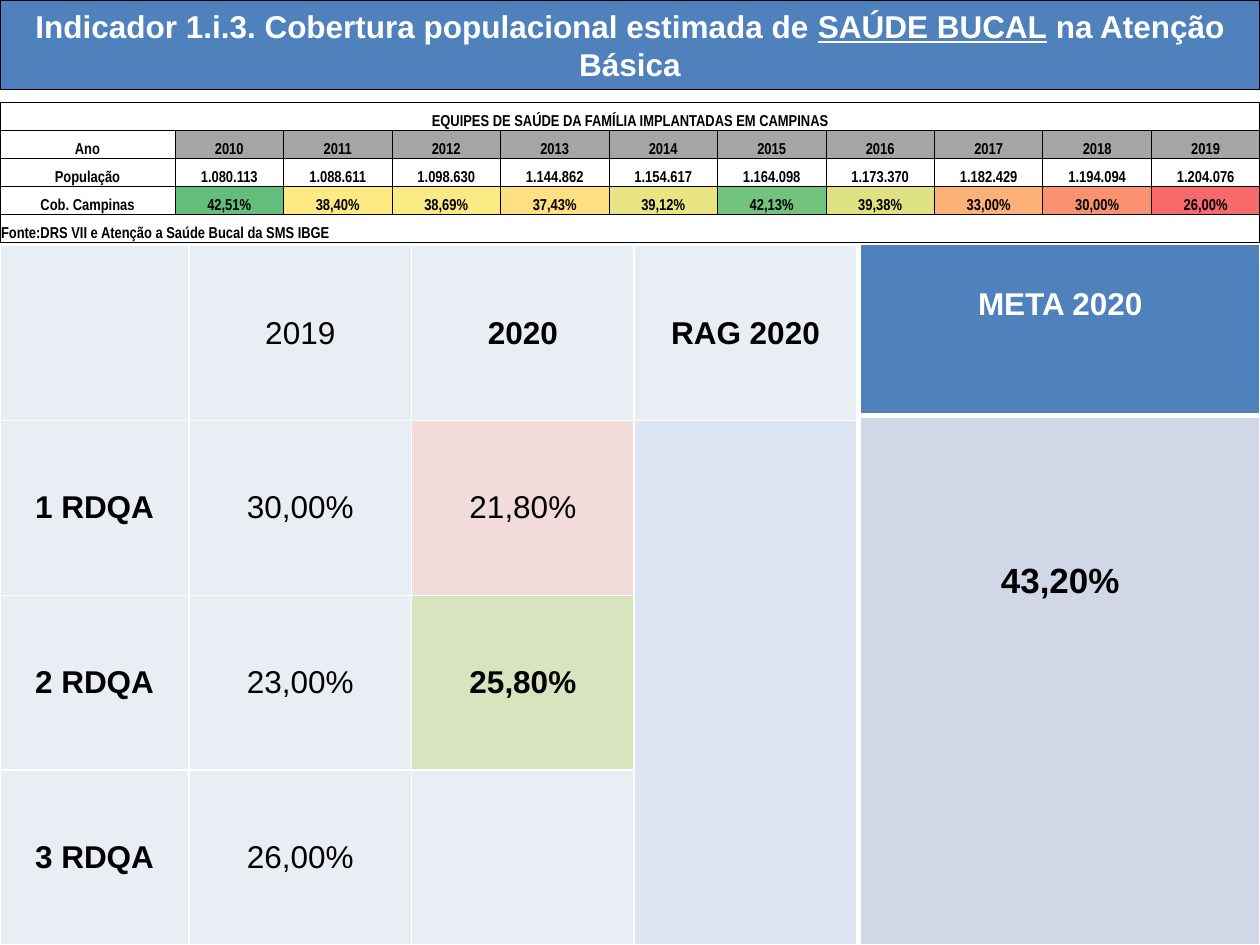
from lxml import etree
from pptx import Presentation
from pptx.dml.color import RGBColor
from pptx.enum import text
from pptx.oxml import ns
from pptx.util import Pt

HUE = {
    "blue": "4F81BD", "white": "FFFFFF", "black": "000000", "gray": "A5A5A5",
    "pale": "E9EDF4", "pink": "F2DCDB", "lime": "D7E4BD", "sky": "DCE6F2",
    "mist": "D0D8E8",
}
MID, LOW, TOP = (text.MSO_ANCHOR.MIDDLE, text.MSO_ANCHOR.BOTTOM,
                 text.MSO_ANCHOR.TOP)
MIDST, LEFT = text.PP_ALIGN.CENTER, text.PP_ALIGN.LEFT


def tone(name):
    return RGBColor.from_string(HUE.get(name, name))


class Deck:
    """Holds the font and the slide being drawn."""

    def __init__(self, wide, high, font):
        self.show = Presentation()
        self.show.slide_width, self.show.slide_height = Pt(wide), Pt(high)
        self.slide = self.show.slides.add_slide(self.show.slide_layouts[5])
        self.font = font

    def add_text(self, para, words, size, hue="black", bold=True, line=False,
                 font=None):
        run = para.add_run()
        run.text = words
        face = run.font
        face.name, face.size = font or self.font, Pt(size)
        face.bold, face.underline = bold, line
        face.color.rgb = tone(hue)

    def title(self, box, parts):
        """parts: (words, underlined) pairs"""
        head = self.slide.shapes.title
        head.left, head.top, head.width, head.height = map(Pt, box)
        head.fill.solid()
        head.fill.fore_color.rgb = tone("blue")
        head.line.color.rgb = tone("black")
        head.line.width = Pt(0.75)
        frame = head.text_frame
        frame.auto_size = text.MSO_AUTO_SIZE.NONE
        frame.word_wrap = True
        frame.vertical_anchor = MID
        para = frame.paragraphs[0]
        para.alignment = MIDST
        for words, line in parts:
            self.add_text(para, words, 18, "white", line=line)

    def table(self, x, y, cols, rows, hue, width):
        grid = self.slide.shapes.add_table(
            len(rows), len(cols), Pt(x), Pt(y), Pt(sum(cols)), Pt(sum(rows))
        ).table
        grid.first_row = grid.horz_banding = False
        for col, size in zip(grid.columns, cols):
            col.width = Pt(size)
        for row, size in zip(grid.rows, rows):
            row.height = Pt(size)
        for cell in grid.iter_cells():
            for side in "LRTB":
                self.edge(cell, side, hue, width)
            cell.fill.background()
        return grid

    def edge(self, cell, side, hue, width):
        props = cell._tc.get_or_add_tcPr()
        tag = ns.qn(f"a:ln{side}")
        line = props.find(tag)
        if line is None:
            line = etree.SubElement(props, tag)
            fill = etree.SubElement(line, ns.qn("a:solidFill"))
            etree.SubElement(fill, ns.qn("a:srgbClr"), val=HUE[hue])
        line.set("w", str(Pt(width)))

    def cell(self, cell, words, size, fill=None, bold=True, font=None,
             hue="black", side=MIDST, stand=MID, pads=(0, 0, 0, 0)):
        (cell.margin_left, cell.margin_top,
         cell.margin_right, cell.margin_bottom) = map(Pt, pads)
        cell.vertical_anchor = stand
        if fill:
            cell.fill.solid()
            cell.fill.fore_color.rgb = tone(fill)
        if words:
            para = cell.text_frame.paragraphs[0]
            para.alignment = side
            self.add_text(para, words, size, hue, bold, font=font)


def main():
    deck = Deck(720, 540, "Arial")

    # Title
    deck.title((0, 0, 720, 51), [
        ("Indicador 1.i.3. Cobertura populacional estimada de ", False),
        ("SAÚDE BUCAL", True),
        (" na Atenção Básica", False),
    ])

    # Results by four-month report
    goals = [
        [("", "pale", 0), ("2019", "pale", 0),
         ("2020", "pale", 1), ("RAG 2020", "pale", 1)],
        [("1 RDQA", "pale", 1), ("30,00%", "pale", 0),
         ("21,80%", "pink", 0), ("", "sky", 0)],
        [("2 RDQA", "pale", 1), ("23,00%", "pale", 0),
         ("25,80%", "lime", 1)],
        [("3 RDQA", "pale", 1), ("26,00%", "pale", 0), ("", "pale", 0)],
    ]
    grid = deck.table(0, 140.4, [108] + [127.2] * 3, [99.9] * 4, "white", 1)
    grid.cell(1, 3).merge(grid.cell(3, 3))
    for r, row in enumerate(goals):
        for c, (words, fill, bold) in enumerate(row):
            deck.cell(grid.cell(r, c), words, 18, fill, bool(bold))

    # Target for 2020
    grid = deck.table(491.75, 139.7, [228.25], [97.6, 302.7], "white", 1)
    head, goal = grid.cell(0, 0), grid.cell(1, 0)
    deck.edge(head, "B", "white", 3)
    deck.edge(goal, "T", "white", 3)
    deck.cell(head, "META 2020", 18, "blue", hue="white", stand=TOP,
              pads=(7.2, 24, 7.2, 3.6))
    deck.cell(goal, "43,20%", 20, "mist", stand=TOP,
              pads=(7.2, 84, 7.2, 3.6))

    # Coverage by year
    years = [str(year) for year in range(2010, 2020)]
    people = ["1.080.113", "1.088.611", "1.098.630", "1.144.862", "1.154.617",
              "1.164.098", "1.173.370", "1.182.429", "1.194.094", "1.204.076"]
    cover = ["42,51%", "38,40%", "38,69%", "37,43%", "39,12%",
             "42,13%", "39,38%", "33,00%", "30,00%", "26,00%"]
    heat = ["63BE7B", "FEE983", "FAEA84", "FEDF81", "E9E583",
            "72C37C", "DFE283", "FBB178", "FA9272", "F8696B"]
    look = dict(size=9, font="Arial Narrow", stand=LOW,
                pads=(0.6, 0.6, 0.6, 0))
    grid = deck.table(0, 58.5, [100] + [62] * 10, [16] * 5, "black", 0.5)
    lines = [
        ("Ano", years, ["gray"] * 10),
        ("População", people, [None] * 10),
        ("Cob. Campinas", cover, heat),
    ]
    for r, (name, words, fills) in enumerate(lines, 1):
        for c, (word, fill) in enumerate(zip([name] + words, [None] + fills)):
            deck.cell(grid.cell(r, c), word, fill=fill, **look)
    for r, words, side in [
        (0, "EQUIPES DE SAÚDE DA FAMÍLIA IMPLANTADAS EM CAMPINAS", MIDST),
        (4, "Fonte:DRS VII e Atenção a Saúde Bucal da SMS IBGE", LEFT),
    ]:
        grid.cell(r, 0).merge(grid.cell(r, 10))
        deck.cell(grid.cell(r, 0), words, side=side, **look)

    deck.show.save("out.pptx")


if __name__ == "__main__":
    main()
